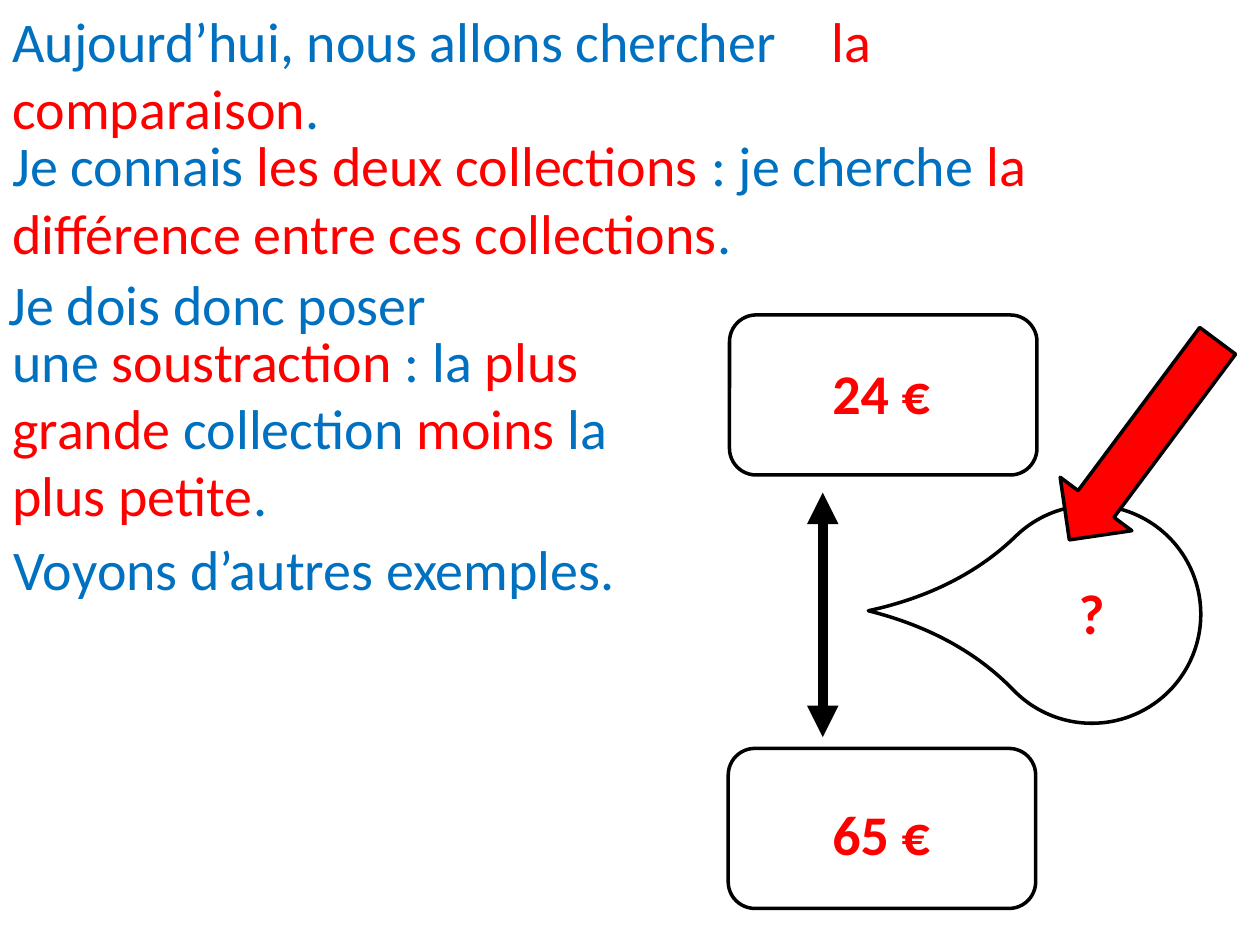
from lxml import etree
from pptx import Presentation
from pptx.dml.color import RGBColor
from pptx.enum import shapes, text
from pptx.oxml.ns import qn
from pptx.util import Inches, Pt

COLOURS = {"blue": "0070C0", "red": "FF0000", "black": "000000"}
LINE_HEIGHTS = {1: 0.64, 2: 1.18, 3: 1.72}


def colour(name):
    return RGBColor.from_string(COLOURS[name])


class Lesson:
    font_name = "Calibri"
    font_size = Pt(32)

    def __init__(self, slide):
        self.slide = slide

    def add_words(self, words, left, top, width, lines=1, bold=False,
                  centred=False, first_indent=0):
        """Add blue text; the parts between asterisks are red."""
        box = self.slide.shapes.add_textbox(
            *map(Inches, (left, top, width, LINE_HEIGHTS[lines])))
        frame = box.text_frame
        frame.word_wrap = True
        frame.auto_size = text.MSO_AUTO_SIZE.SHAPE_TO_FIT_TEXT
        paragraph = frame.paragraphs[0]
        if centred:
            paragraph.alignment = text.PP_ALIGN.CENTER
        if first_indent:
            properties = paragraph._p.get_or_add_pPr()
            properties.set("marL", "0")
            properties.set("indent", str(Inches(first_indent)))
        for position, part in enumerate(words.split("*")):
            if part:
                run = paragraph.add_run()
                run.text = part
                run.font.name = self.font_name
                run.font.size = self.font_size
                run.font.bold = bold
                run.font.color.rgb = colour("red" if position % 2 else "blue")

    def add_outline(self, preset, left, top, width, height, rotation=0,
                    adjustment=None, fill=None):
        shape = self.slide.shapes.add_shape(
            preset, *map(Inches, (left, top, width, height)))
        shape.shadow.inherit = False
        shape.rotation = rotation
        if adjustment is not None:
            shape.adjustments[0] = adjustment
        if fill:
            shape.fill.solid()
            shape.fill.fore_color.rgb = colour(fill)
        else:
            shape.fill.background()
        shape.line.color.rgb = colour("black")
        shape.line.width = Pt(2)

    def add_double_arrow(self, x, top, bottom):
        arrow = self.slide.shapes.add_connector(
            shapes.MSO_CONNECTOR.STRAIGHT, *map(Inches, (x, top, x, bottom)))
        arrow.line.color.rgb = colour("black")
        arrow.line.width = Pt(6)
        properties = arrow._element.spPr
        line = properties.find(qn("a:ln"))
        for end in ("a:headEnd", "a:tailEnd"):
            etree.SubElement(line, qn(end), type="triangle")
        etree.SubElement(properties, qn("a:effectLst"))


def main():
    deck = Presentation()
    deck.slide_width, deck.slide_height = Inches(10), Inches(7.5)
    lesson = Lesson(deck.slides.add_slide(deck.slide_layouts[6]))
    preset = shapes.MSO_SHAPE

    lesson.add_words("Aujourd’hui, nous allons chercher", 0, 0, 10)
    lesson.add_words("*la comparaison*.", 0, 0, 9.29, lines=2,
                     first_indent=6.5)
    lesson.add_words("Je connais *les deux collections *: je cherche "
                     "*la différence entre ces collections*.",
                     0, 0.99, 10, lines=2)
    lesson.add_words("Je dois donc poser", -0.03, 2.09, 4.23)
    lesson.add_words("une *soustraction* : la *plus grande* collection "
                     "*moins* la *plus petite*.", 0, 2.54, 5.16, lines=3)
    lesson.add_words("Voyons d’autres exemples.", 0.01, 4.19, 10)

    for left, top in ((5.79, 2.5), (5.78, 5.94)):
        lesson.add_outline(preset.ROUNDED_RECTANGLE, left, top, 2.44, 1.27)
    lesson.add_double_arrow(6.53, 3.91, 5.85)
    lesson.add_outline(preset.TEAR, 7.8, 4.01, 1.73, 1.73,
                       rotation=225.9, adjustment=1.45)

    for amount, left, top in (("24 €", 5.93, 2.8), ("65 €", 5.93, 6.3),
                              ("?", 7.6, 4.54)):
        lesson.add_words(f"*{amount}*", left, top, 2.13, bold=True,
                         centred=True)
    lesson.add_outline(preset.RIGHT_ARROW, 8.09, 3.14, 1.97, 0.71,
                       rotation=126.7, fill="red")

    deck.save("out.pptx")


if __name__ == "__main__":
    main()
